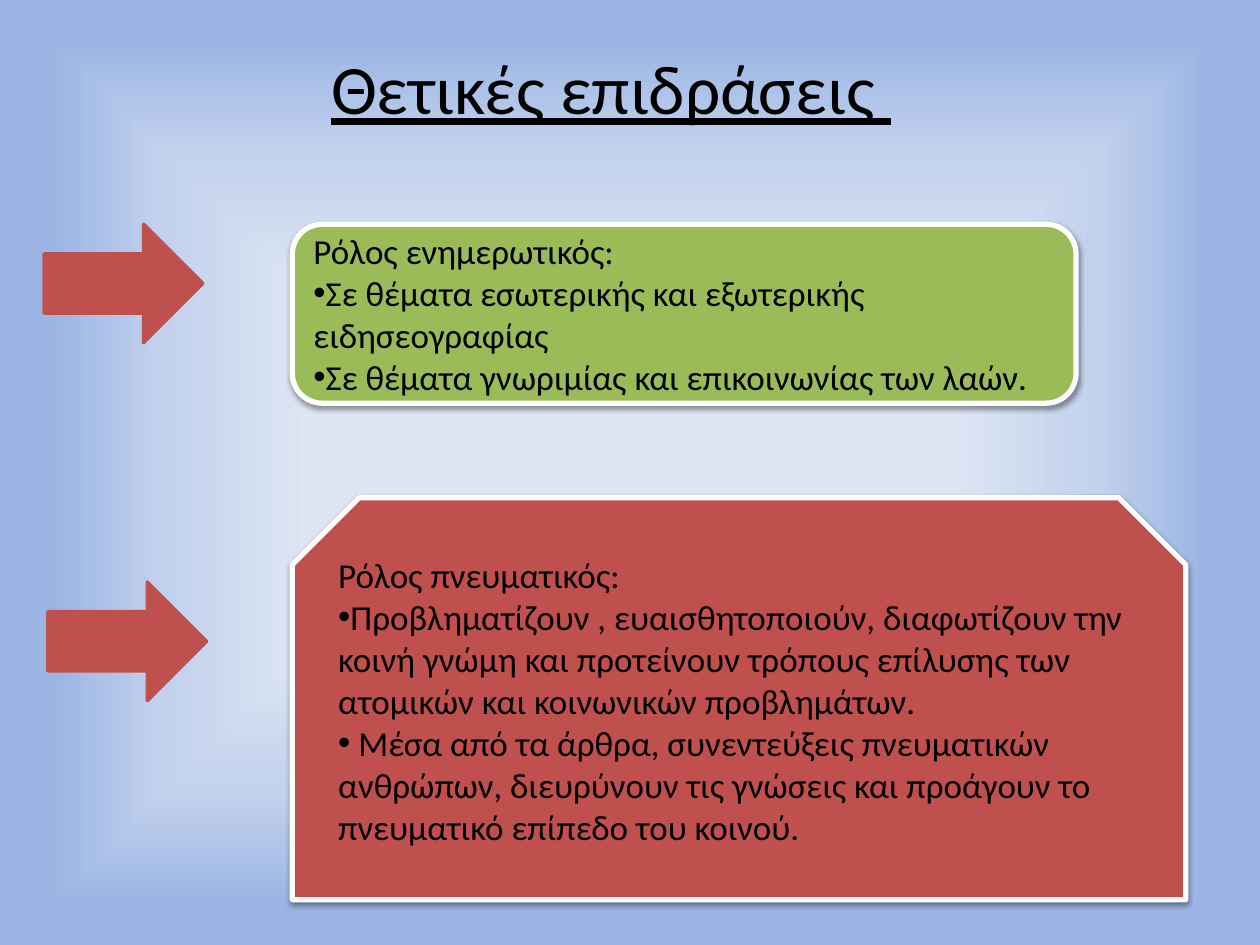
import pptx
import pptx.util
import pptx.oxml
import pptx.dml.color
import pptx.enum.shapes
import pptx.enum.text
import lxml.etree
from dataclasses import dataclass

Inches = pptx.util.Inches
Shapes = pptx.enum.shapes.MSO_SHAPE
Anchor = pptx.enum.text.MSO_ANCHOR
Align = pptx.enum.text.PP_ALIGN
DRAWING = "http://schemas.openxmlformats.org/drawingml/2006/main"


@dataclass(frozen=True)
class Theme:
    font: str = "Calibri"
    title_size: float = 39.6
    body_size: float = 20
    ink: str = "000000"
    red: str = "C0504D"
    green: str = "9BBB59"
    white: str = "FFFFFF"
    # Percent position and colour, from the centre outwards
    backdrop: tuple = ((4, "E1E8F5"), (37, "DEE6F4"), (68, "C2D1ED"), (92, "9AB5E4"))


def color(value):
    return pptx.dml.color.RGBColor.from_string(value)


def set_attributes(target, values):
    for name, value in values.items():
        setattr(target, name, value)


class SlideBuilder:
    def __init__(self, slide, theme):
        self.slide = slide
        self.theme = theme

    def background(self):
        fill = self.slide.background.fill
        fill.solid()
        stops = "".join(
            f'<a:gs pos="{position * 1000}"><a:srgbClr val="{value}"/></a:gs>'
            for position, value in self.theme.backdrop)
        gradient = pptx.oxml.parse_xml(
            f'<a:gradFill xmlns:a="{DRAWING}" rotWithShape="1"><a:gsLst>{stops}</a:gsLst>'
            '<a:path path="rect"><a:fillToRect l="50000" t="50000" r="50000" b="50000"/>'
            '</a:path></a:gradFill>')
        solid = self.slide.element.find(f".//{{{DRAWING}}}solidFill")
        solid.getparent().replace(solid, gradient)

    def add_text(self, paragraph, text, size, **formats):
        run = paragraph.add_run()
        run.text = text
        set_attributes(run.font, {"name": self.theme.font,
                                  "size": pptx.util.Pt(size), **formats})
        run.font.color.rgb = color(self.theme.ink)

    def title(self, text, left, top, width, height):
        shape = self.slide.shapes.title
        set_attributes(shape, {"left": Inches(left), "top": Inches(top),
                               "width": Inches(width), "height": Inches(height)})
        set_attributes(shape.text_frame, {"vertical_anchor": Anchor.TOP,
                                          "margin_top": 0, "word_wrap": True})
        paragraph = shape.text_frame.paragraphs[0]
        paragraph.alignment = Align.CENTER
        self.add_text(paragraph, text, self.theme.title_size, underline=True)

    def shape(self, kind, left, top, width, height, fill, line, line_width):
        shape = self.slide.shapes.add_shape(
            kind, Inches(left), Inches(top), Inches(width), Inches(height))
        shape.shadow.inherit = False
        shape.fill.solid()
        shape.fill.fore_color.rgb = color(fill)
        shape.line.color.rgb = color(line)
        shape.line.width = pptx.util.Pt(line_width)
        return shape

    def arrow(self, left, top):
        self.shape(Shapes.RIGHT_ARROW, left, top, 1.26, 0.94,
                   self.theme.red, self.theme.red, 2)

    def card(self, kind, left, top, width, height, fill, heading, items, margin_bottom=0.05):
        shape = self.shape(kind, left, top, width, height, fill, self.theme.white, 3)
        self.add_shadow(shape)
        frame = shape.text_frame
        set_attributes(frame, {"word_wrap": True, "vertical_anchor": Anchor.MIDDLE,
                               "margin_bottom": Inches(margin_bottom)})
        for index, text in enumerate([heading, *items]):
            paragraph = frame.add_paragraph() if index else frame.paragraphs[0]
            paragraph.alignment = Align.LEFT
            self.add_text(paragraph, text, self.theme.body_size)
            if index:
                self.add_bullet(paragraph)

    def add_shadow(self, shape):
        effects = shape.element.spPr.find(f"{{{DRAWING}}}effectLst")
        effects.append(pptx.oxml.parse_xml(
            f'<a:outerShdw xmlns:a="{DRAWING}" blurRad="{pptx.util.Pt(3.1)}" '
            f'dist="{pptx.util.Pt(1.6)}" dir="5400000" rotWithShape="0">'
            f'<a:srgbClr val="{self.theme.ink}"><a:alpha val="38000"/></a:srgbClr>'
            '</a:outerShdw>'))

    def add_bullet(self, paragraph):
        properties = paragraph._p.get_or_add_pPr()
        font = lxml.etree.SubElement(properties, f"{{{DRAWING}}}buFont")
        font.set("typeface", "Arial")
        bullet = lxml.etree.SubElement(properties, f"{{{DRAWING}}}buChar")
        bullet.set("char", "•")


def main():
    presentation = pptx.Presentation()
    presentation.slide_width = Inches(10)
    presentation.slide_height = Inches(7.5)
    theme = Theme()
    builder = SlideBuilder(
        presentation.slides.add_slide(presentation.slide_layouts[5]), theme)

    builder.background()
    builder.title("Θετικές επιδράσεις ", 0.35, 0.36, 9, 1.25)

    # Informative role
    builder.arrow(0.35, 1.78)
    builder.card(
        Shapes.ROUNDED_RECTANGLE, 2.32, 1.78, 6.22, 1.42, theme.green,
        "Ρόλος ενημερωτικός:",
        ["Σε θέματα εσωτερικής και εξωτερικής ειδησεογραφίας",
         "Σε θέματα γνωριμίας και επικοινωνίας των λαών."])

    # Intellectual role
    builder.arrow(0.38, 4.62)
    builder.card(
        Shapes.SNIP_2_SAME_RECTANGLE, 2.32, 3.95, 7.09, 3.19, theme.red,
        "Ρόλος πνευματικός:",
        ["Προβληματίζουν , ευαισθητοποιούν, διαφωτίζουν την κοινή γνώμη και "
         "προτείνουν τρόπους επίλυσης των ατομικών και κοινωνικών προβλημάτων.",
         " Μέσα από τα άρθρα, συνεντεύξεις πνευματικών ανθρώπων, διευρύνουν "
         "τις γνώσεις και προάγουν το πνευματικό επίπεδο του κοινού."],
        margin_bottom=0.29)

    presentation.save("out.pptx")


if __name__ == "__main__":
    main()
